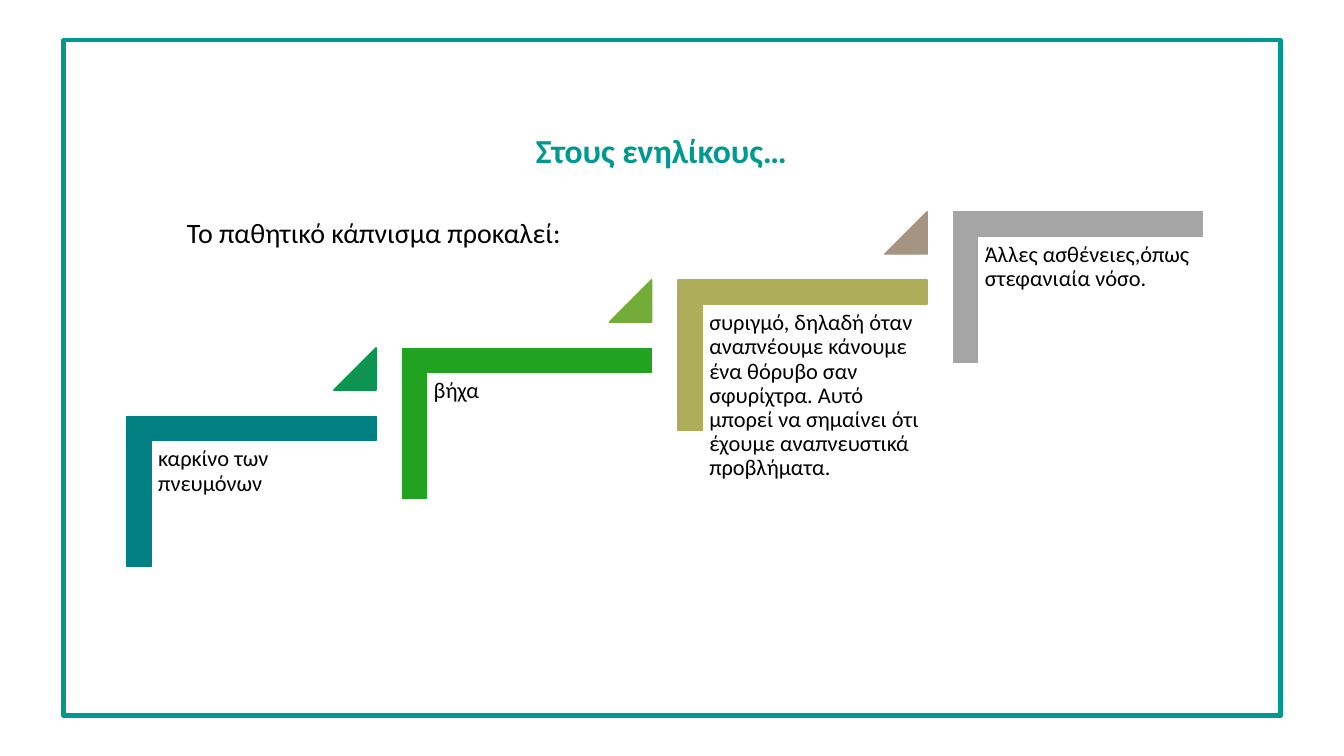
"""Build a slide with a rising staircase of the effects of passive smoking on adults."""
import dataclasses
import typing

import pptx
import pptx.dml.color
import pptx.enum.shapes
import pptx.enum.text
import pptx.util

RGB = pptx.dml.color.RGBColor
KIND = pptx.enum.shapes.MSO_SHAPE
ALIGN = pptx.enum.text.PP_ALIGN
ANCHOR = pptx.enum.text.MSO_ANCHOR
Pt = pptx.util.Pt

WIDE = pptx.util.Inches(13.33)
HIGH = pptx.util.Inches(7.5)
FONT = "Calibri"
TEAL = RGB(0x00, 0x99, 0x90)
BLACK = RGB(0x00, 0x00, 0x00)
PINE = RGB(0x00, 0x80, 0x80)
JADE = RGB(0x0D, 0x94, 0x51)
GREEN = RGB(0x21, 0xA3, 0x21)
LIME = RGB(0x73, 0xAC, 0x39)
OLIVE = RGB(0xAD, 0xAD, 0x5A)
TAUPE = RGB(0xA6, 0x94, 0x82)
GRAY = RGB(0xA5, 0xA5, 0xA5)


@dataclasses.dataclass(frozen=True)
class Box:
    """Place and size as percent shares of the slide."""

    left: float
    top: float
    width: float
    height: float

    def move(self, step: int) -> "Box":
        """Shift the box up the stairs."""
        return Box(self.left + step * RUN, self.top - step * RISE, self.width, self.height)

    def emu(self) -> tuple[int, int, int, int]:
        """Give the box in slide units."""
        return (
            round(self.left * WIDE / 100),
            round(self.top * HIGH / 100),
            round(self.width * WIDE / 100),
            round(self.height * HIGH / 100),
        )


@dataclasses.dataclass(frozen=True)
class Step:
    """One stair with the colour of the marker that leads to the next."""

    text: str
    color: RGB
    marker: typing.Optional[RGB] = None


RUN, RISE = 20.5, 9
FRAME = Box(4.73, 5.33, 90.55, 89.33)
TITLE = Box(6.08, 16.93, 86.27, 6.4)
LEAD = Box(13.05, 27.6, 29.56, 6)
ANGLE = Box(13.13, 48.53, 11.18, 32.93)
LABEL = Box(11.25, 58.27, 16.73, 26.13)
MARKER = Box(24.83, 46, 3.15, 5.6)

STEPS = [
    Step("καρκίνο των πνευμόνων", PINE, JADE),
    Step("βήχα", GREEN, LIME),
    Step(
        "συριγμό, δηλαδή όταν αναπνέουμε κάνουμε ένα θόρυβο σαν σφυρίχτρα. "
        "Αυτό μπορεί να σημαίνει ότι έχουμε αναπνευστικά προβλήματα.",
        OLIVE,
        TAUPE,
    ),
    Step("Άλλες ασθένειες,όπως στεφανιαία νόσο.", GRAY),
]


def write(frame: typing.Any, text: str, size: int, color: RGB, bold: bool = False,
          align: ALIGN = ALIGN.LEFT, line: float = 0.9, after: float = 0) -> None:
    """Fill a text frame with one formatted run."""
    para = frame.paragraphs[0]
    para.alignment = align
    para.line_spacing = line
    para.space_before = Pt(0)
    para.space_after = Pt(after)
    run = para.add_run()
    run.text = text
    run.font.name = FONT
    run.font.size = Pt(size)
    run.font.bold = bold
    run.font.color.rgb = color


def draw(slide: typing.Any, kind: KIND, box: Box, color: RGB,
         adjust: tuple[float, ...] = (), turn: int = 0) -> None:
    """Draw a solid preset shape."""
    shape = slide.shapes.add_shape(kind, *box.emu())
    shape.shadow.inherit = False
    shape.fill.solid()
    shape.fill.fore_color.rgb = color
    shape.line.color.rgb = color
    shape.line.width = Pt(1)
    shape.rotation = turn
    for index, value in enumerate(adjust):
        shape.adjustments[index] = value


def border(slide: typing.Any) -> None:
    """Draw the outline around the slide."""
    shape = slide.shapes.add_shape(KIND.RECTANGLE, *FRAME.emu())
    shape.shadow.inherit = False
    shape.fill.background()
    shape.line.color.rgb = TEAL
    shape.line.width = Pt(3)


def head(slide: typing.Any) -> None:
    """Place and write the title."""
    title = slide.shapes.title
    title.left, title.top, title.width, title.height = TITLE.emu()
    title.text_frame.vertical_anchor = ANCHOR.MIDDLE
    write(title.text_frame, "Στους ενηλίκους…", 24, TEAL, True, ALIGN.CENTER)


def stair(slide: typing.Any, index: int, step: Step) -> None:
    """Draw one stair, its label and its marker."""
    draw(slide, KIND.CORNER, ANGLE.move(index), step.color, (0.16, 0.16), 90)
    frame = slide.shapes.add_textbox(*LABEL.move(index).emu()).text_frame
    frame.word_wrap = True
    inset = pptx.util.Inches(0.07)
    frame.margin_left = frame.margin_right = inset
    frame.margin_top = frame.margin_bottom = inset
    write(frame, step.text, 16, BLACK, after=5.6)
    if step.marker is not None:
        draw(slide, KIND.ISOSCELES_TRIANGLE, MARKER.move(index), step.marker, (1,))


def lead(slide: typing.Any) -> None:
    """Write the line that leads into the stairs."""
    frame = slide.shapes.add_textbox(*LEAD.emu()).text_frame
    frame.word_wrap = False
    frame.auto_size = pptx.enum.text.MSO_AUTO_SIZE.SHAPE_TO_FIT_TEXT
    write(frame, "Το παθητικό κάπνισμα προκαλεί:", 20, BLACK,
          align=ALIGN.CENTER, line=1.07, after=8)


def main() -> None:
    """Build and save the slide."""
    deck = pptx.Presentation()
    deck.slide_width, deck.slide_height = WIDE, HIGH
    slide = deck.slides.add_slide(deck.slide_layouts[5])
    border(slide)
    head(slide)
    for index, step in enumerate(STEPS):
        stair(slide, index, step)
    lead(slide)
    deck.save("out.pptx")


if __name__ == "__main__":
    main()
